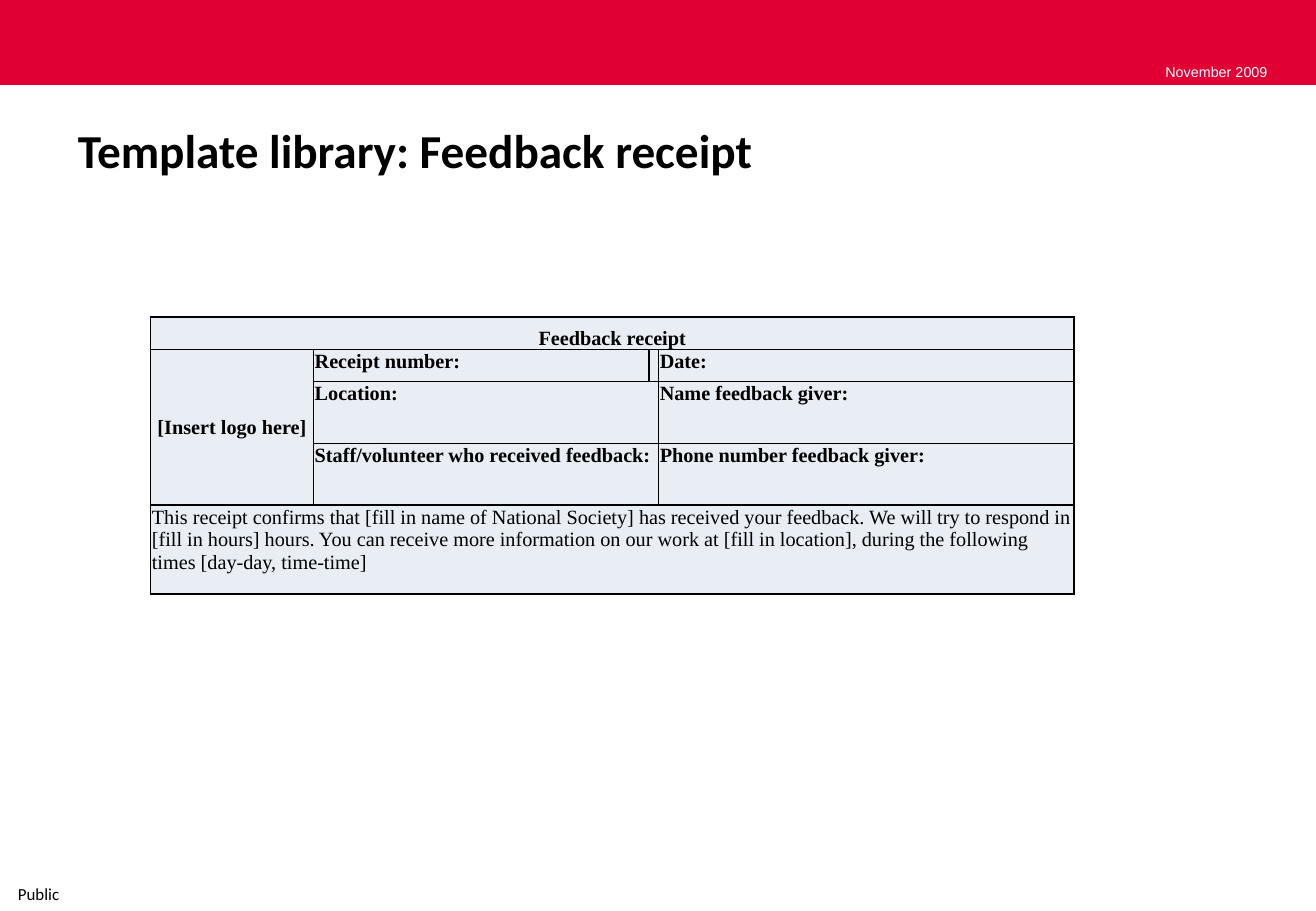
from lxml.etree import SubElement
from pptx import Presentation
from pptx.dml.color import RGBColor
from pptx.enum.shapes import MSO_SHAPE
from pptx.enum.text import MSO_ANCHOR as Anchor, PP_ALIGN as Align
from pptx.oxml.ns import qn
from pptx.util import Inches, Pt

COLORS = {"red": "E00034", "white": "FFFFFF", "black": "000000", "cell": "E9EDF4"}
COLUMN_WIDTHS = [1.34, 2.76, 0.08, 3.42]
ROW_HEIGHTS = [0.27, 0.26, 0.51, 0.51, 0.73]
MERGES = [((0, 0), (0, 3)), ((1, 0), (3, 0)), ((2, 1), (2, 2)),
          ((3, 1), (3, 2)), ((4, 0), (4, 3))]
LABELS = {
    (0, 0): "Feedback receipt",
    (1, 0): "[Insert logo here]",
    (1, 1): "Receipt number:",
    (1, 3): "Date:",
    (2, 1): "Location:",
    (2, 3): "Name feedback giver:",
    (3, 1): "Staff/volunteer who received feedback:",
    (3, 3): "Phone number feedback giver:",
}
CONFIRMATION = (
    "This receipt confirms that [fill in name of National Society] has received your "
    "feedback. We will try to respond in [fill in hours] hours. You can receive more "
    "information on our work at [fill in location], during the following times "
    "[day-day, time-time]"
)


def color(name):
    return RGBColor.from_string(COLORS[name])


def write(paragraph, text, font, size, color_name="black", bold=False, align=Align.LEFT):
    paragraph.alignment = align
    run = paragraph.add_run()
    run.text = text
    run.font.name = font
    run.font.size = Pt(size)
    run.font.bold = bold
    run.font.color.rgb = color(color_name)


def add_banner(slide):
    banner = slide.shapes.add_shape(
        MSO_SHAPE.RECTANGLE, 0, 0, Inches(10.83), Inches(0.7))
    banner.shadow.inherit = False
    banner.fill.solid()
    banner.fill.fore_color.rgb = color("red")
    banner.line.fill.background()


def add_label(slide, box, text, font, size, color_name, align=Align.LEFT):
    label = slide.shapes.add_textbox(*map(Inches, box))
    frame = label.text_frame
    frame.word_wrap = True
    frame.vertical_anchor = Anchor.MIDDLE
    frame.margin_top = frame.margin_bottom = 0
    write(frame.paragraphs[0], text, font, size, color_name, align=align)


def set_title(slide, text):
    title = slide.shapes.title
    title.left, title.top = Inches(0.54), Inches(0.95)
    title.width, title.height = Inches(9.75), Inches(0.94)
    title.text_frame.vertical_anchor = Anchor.TOP
    write(title.text_frame.paragraphs[0], text, "Calibri", 28, bold=True)


def style_cell(cell):
    cell.margin_left = cell.margin_right = cell.margin_top = Inches(0.01)
    cell.margin_bottom = 0
    properties = cell._tc.get_or_add_tcPr()
    for side in ("a:lnL", "a:lnR", "a:lnT", "a:lnB"):
        border = SubElement(properties, qn(side), w=str(Pt(1)))
        fill = SubElement(border, qn("a:solidFill"))
        SubElement(fill, qn("a:srgbClr"), val=COLORS["black"])
    cell.fill.solid()
    cell.fill.fore_color.rgb = color("cell")


def add_receipt_table(slide):
    table = slide.shapes.add_table(
        len(ROW_HEIGHTS), len(COLUMN_WIDTHS), Inches(1.24), Inches(2.61),
        Inches(sum(COLUMN_WIDTHS)), Inches(sum(ROW_HEIGHTS))).table
    table.first_row = table.horz_banding = False
    for column, width in zip(table.columns, COLUMN_WIDTHS):
        column.width = Inches(width)
    for row, height in zip(table.rows, ROW_HEIGHTS):
        row.height = Inches(height)
    for cell in table.iter_cells():
        style_cell(cell)
    for start, end in MERGES:
        table.cell(*start).merge(table.cell(*end))

    for position, text in LABELS.items():
        align = Align.CENTER if position[1] == 0 else Align.LEFT
        write(table.cell(*position).text_frame.paragraphs[0], text,
              "Times New Roman", 12, bold=True, align=align)
    write(table.cell(4, 0).text_frame.paragraphs[0], CONFIRMATION, "Times New Roman", 12)
    table.cell(0, 0).vertical_anchor = Anchor.BOTTOM
    table.cell(1, 0).vertical_anchor = Anchor.MIDDLE
    spacer = table.cell(1, 2).text_frame.paragraphs[0]
    SubElement(spacer._p, qn("a:endParaRPr"), sz="1200")


def main():
    presentation = Presentation()
    presentation.slide_width = Inches(10.83)
    presentation.slide_height = Inches(7.5)
    slide = presentation.slides.add_slide(presentation.slide_layouts[5])
    add_banner(slide)
    add_label(slide, (9.23, 0.47, 1.3, 0.24), "November 2009", "Arial", 8.5, "white",
              Align.RIGHT)
    add_label(slide, (0.05, 7.21, 0.8, 0.29), "Public", "Calibri", 10, "black")
    set_title(slide, "Template library: Feedback receipt")
    add_receipt_table(slide)
    presentation.save("out.pptx")


if __name__ == "__main__":
    main()
